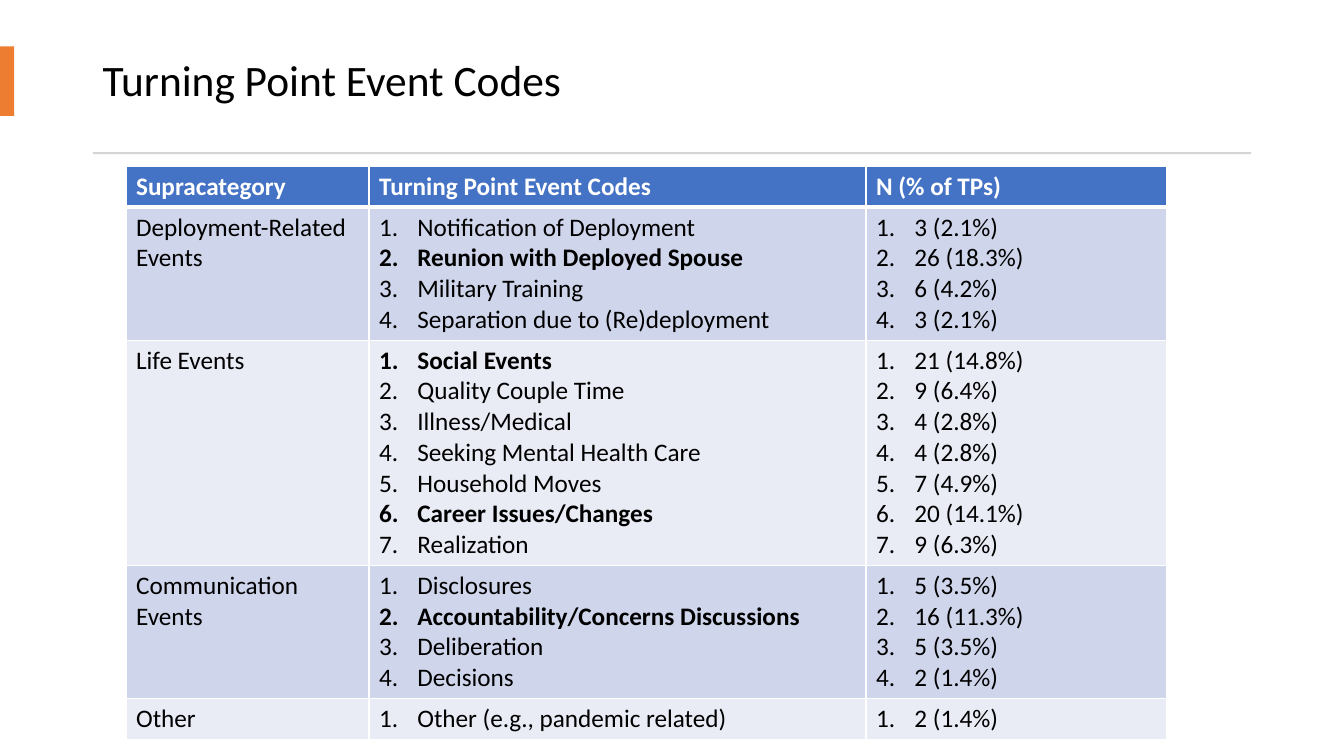
from dataclasses import dataclass

import pptx
import pptx.dml.color
import pptx.enum.shapes
import pptx.enum.text
import pptx.oxml
import pptx.oxml.ns
import pptx.util

Inches = pptx.util.Inches
FONT = "Calibri"
BLACK, WHITE = "000000", "FFFFFF"
HEADER_FILL = "4472C4"
BAND_FILLS = ("CFD5EA", "E9EBF5")
COLUMN_WIDTHS = (2.41, 4.93, 2.98)
HEADINGS = ("Supracategory", "Turning Point Event Codes", "N (% of TPs)")


@dataclass
class Code:
    name: str
    count: str
    bold: bool = False


@dataclass
class Category:
    name: str
    codes: list[Code]


@dataclass
class Bar:
    left: float
    top: float
    width: float
    height: float
    fill: str


CATEGORIES = [
    Category("Deployment-Related Events", [
        Code("Notification of Deployment", "3 (2.1%)"),
        Code("Reunion with Deployed Spouse", "26 (18.3%)", True),
        Code("Military Training", "6 (4.2%)"),
        Code("Separation due to (Re)deployment", "3 (2.1%)"),
    ]),
    Category("Life Events", [
        Code("Social Events", "21 (14.8%)", True),
        Code("Quality Couple Time", "9 (6.4%)"),
        Code("Illness/Medical", "4 (2.8%)"),
        Code("Seeking Mental Health Care", "4 (2.8%)"),
        Code("Household Moves", "7 (4.9%)"),
        Code("Career Issues/Changes", "20 (14.1%)", True),
        Code("Realization", "9 (6.3%)"),
    ]),
    Category("Communication Events", [
        Code("Disclosures", "5 (3.5%)"),
        Code("Accountability/Concerns Discussions", "16 (11.3%)", True),
        Code("Deliberation", "5 (3.5%)"),
        Code("Decisions", "2 (1.4%)"),
    ]),
    Category("Other", [Code("Other (e.g., pandemic related)", "2 (1.4%)")]),
]
BARS = [Bar(0, 0.46, 0.14, 0.69, "ED7D31"), Bar(0.92, 1.51, 11.49, 0.02, "D5D5D5")]


def rgb(color: str) -> pptx.dml.color.RGBColor:
    return pptx.dml.color.RGBColor.from_string(color)


def set_text(p, text: str, size: float, color: str, bold: bool = False) -> None:
    p.text = text
    font = p.runs[0].font
    font.name, font.size, font.bold = FONT, pptx.util.Pt(size), bold
    font.color.rgb = rgb(color)


def number_paragraph(p) -> None:
    """Give the paragraph a hanging automatic number."""
    pPr = p._p.get_or_add_pPr()
    pPr.set("marL", str(Inches(0.38)))
    pPr.set("indent", str(-Inches(0.38)))
    bullet = pptx.oxml.ns.qn("a:buAutoNum")
    pPr.append(pPr.makeelement(bullet, {"type": "arabicPeriod"}))


def style_cell(cell, fill: str, top: float = 1, bottom: float = 1) -> None:
    """Set the fill and the white borders, with widths in points."""
    tcPr = cell._tc.get_or_add_tcPr()
    for side, width in (("L", 1), ("R", 1), ("T", top), ("B", bottom)):
        tcPr.append(pptx.oxml.parse_xml(
            f'<a:ln{side} {pptx.oxml.ns.nsdecls("a")} w="{pptx.util.Pt(width)}">'
            f'<a:solidFill><a:srgbClr val="{WHITE}"/></a:solidFill></a:ln{side}>'))
    cell.fill.solid()
    cell.fill.fore_color.rgb = rgb(fill)


def fill_list(cell, items: list[tuple[str, bool]]) -> None:
    tf = cell.text_frame
    for i, (text, bold) in enumerate(items):
        p = tf.add_paragraph() if i else tf.paragraphs[0]
        set_text(p, text, 18, BLACK, bold)
        number_paragraph(p)


def row_height(lines: int) -> int:
    return Inches(0.1 + 0.305 * lines)


def add_title(s, text: str) -> None:
    tf = s.shapes.add_textbox(Inches(0.92), Inches(0.27), Inches(11.49), Inches(1.1)).text_frame
    tf.word_wrap = True
    tf.vertical_anchor = pptx.enum.text.MSO_ANCHOR.MIDDLE
    set_text(tf.paragraphs[0], text, 31, BLACK)
    tf.paragraphs[0].line_spacing = 0.9


def add_bar(s, bar: Bar) -> None:
    sp = s.shapes.add_shape(
        pptx.enum.shapes.MSO_SHAPE.RECTANGLE,
        Inches(bar.left), Inches(bar.top), Inches(bar.width), Inches(bar.height))
    sp.shadow.inherit = False
    sp.fill.solid()
    sp.fill.fore_color.rgb = rgb(bar.fill)
    sp.line.fill.background()


def add_code_table(s) -> None:
    heights = [row_height(n) for n in [1] + [len(c.codes) for c in CATEGORIES]]
    table = s.shapes.add_table(
        len(heights), len(HEADINGS), Inches(1.25), Inches(1.65),
        Inches(sum(COLUMN_WIDTHS)), sum(heights)).table
    for column, width in zip(table.columns, COLUMN_WIDTHS):
        column.width = Inches(width)
    for row, height in zip(table.rows, heights):
        row.height = height
    for cell, heading in zip(table.rows[0].cells, HEADINGS):
        set_text(cell.text_frame.paragraphs[0], heading, 18, WHITE, True)
        style_cell(cell, HEADER_FILL, bottom=3)
    for i, category in enumerate(CATEGORIES):
        cells = list(table.rows[i + 1].cells)
        set_text(cells[0].text_frame.paragraphs[0], category.name, 18, BLACK)
        fill_list(cells[1], [(c.name, c.bold) for c in category.codes])
        fill_list(cells[2], [(c.count, False) for c in category.codes])
        for cell in cells:
            style_cell(cell, BAND_FILLS[i % 2], top=1 if i else 3)


def main() -> None:
    prs = pptx.Presentation()
    prs.slide_width, prs.slide_height = Inches(13.33), Inches(7.5)
    s = prs.slides.add_slide(prs.slide_layouts[6])
    add_title(s, "Turning Point Event Codes")
    for bar in BARS:
        add_bar(s, bar)
    add_code_table(s)
    prs.save("out.pptx")


if __name__ == "__main__":
    main()
